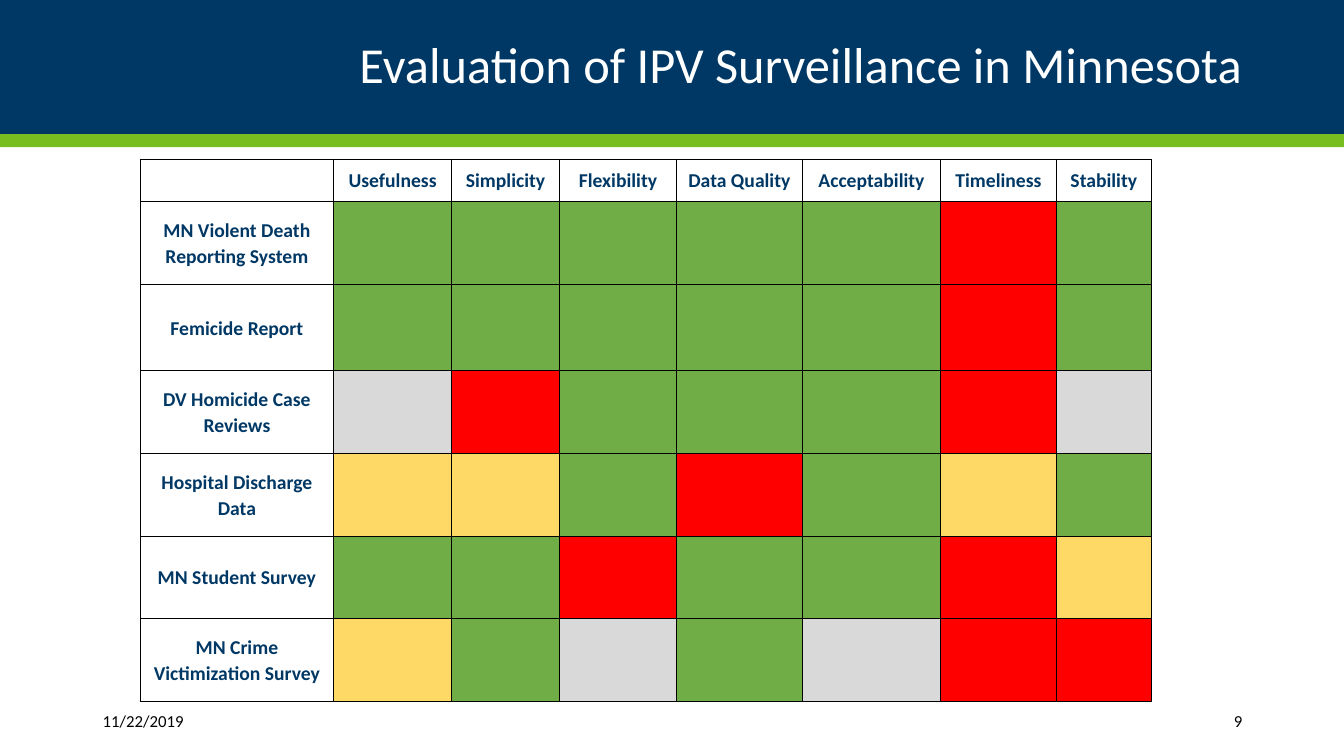
"""Build the slide that rates Minnesota IPV data sources by surveillance attribute."""
from dataclasses import dataclass

from lxml import etree
from pptx import Presentation
from pptx.dml.color import RGBColor
from pptx.enum.shapes import MSO_SHAPE
from pptx.enum.text import MSO_ANCHOR, PP_ALIGN
from pptx.oxml.ns import qn
from pptx.util import Inches, Pt

RECTANGLE = MSO_SHAPE.RECTANGLE
MIDDLE = MSO_ANCHOR.MIDDLE
LEFT, CENTER, RIGHT = PP_ALIGN.LEFT, PP_ALIGN.CENTER, PP_ALIGN.RIGHT


@dataclass(frozen=True)
class Theme:
    font: str = "Calibri"
    navy: str = "003865"
    lime: str = "78BE21"
    white: str = "FFFFFF"
    black: str = "000000"
    green: str = "70AD47"
    yellow: str = "FFD966"
    red: str = "FF0000"
    gray: str = "D9D9D9"
    title_size: int = 36
    label_size: int = 14
    footer_size: int = 12
    border_width: int = 1


THEME = Theme()
RATING_COLORS = {"G": THEME.green, "Y": THEME.yellow, "R": THEME.red, "N": THEME.gray}

ATTRIBUTES = ["Usefulness", "Simplicity", "Flexibility", "Data Quality",
              "Acceptability", "Timeliness", "Stability"]
SOURCE_RATINGS = [
    ("MN Violent Death Reporting System", "GGGGGRG"),
    ("Femicide Report", "GGGGGRG"),
    ("DV Homicide Case Reviews", "NRGGGRN"),
    ("Hospital Discharge Data", "YYGRGYG"),
    ("MN Student Survey", "GGRGGRY"),
    ("MN Crime Victimization Survey", "YGNGNRR"),
]
COLUMN_WIDTHS = [1.92, 1.17, 1.07, 1.16, 1.25, 1.37, 1.15, 0.94]
ROW_HEIGHTS = [0.42, 0.82, 0.86, 0.82, 0.82, 0.82, 0.82]


def add_band(slide, top, height, color):
    """Add a borderless band across the full slide width."""
    band = slide.shapes.add_shape(RECTANGLE, 0, Inches(top), Inches(13.33), Inches(height))
    band.shadow.inherit = False
    band.fill.solid()
    band.fill.fore_color.rgb = RGBColor.from_string(color)
    band.line.fill.background()


def write_text(frame, text, size, color, align, spacing=1.0, bold=False):
    """Write one styled run into the first paragraph of a text frame."""
    paragraph = frame.paragraphs[0]
    paragraph.alignment = align
    paragraph.line_spacing = spacing
    run = paragraph.add_run()
    run.text = text
    run.font.name = THEME.font
    run.font.size = Pt(size)
    run.font.bold = bold
    run.font.color.rgb = RGBColor.from_string(color)


def add_text(slide, box, text, size, color, align, spacing=1.0):
    """Add a vertically centred, wrapping text box."""
    frame = slide.shapes.add_textbox(*map(Inches, box)).text_frame
    frame.word_wrap = True
    frame.vertical_anchor = MIDDLE
    write_text(frame, text, size, color, align, spacing)


def add_borders(cell):
    """Draw a thin solid line on all four sides of a cell."""
    properties = cell._tc.get_or_add_tcPr()
    for side in ("a:lnL", "a:lnR", "a:lnT", "a:lnB"):
        line = etree.SubElement(properties, qn(side), w=str(Pt(THEME.border_width)))
        fill = etree.SubElement(line, qn("a:solidFill"))
        etree.SubElement(fill, qn("a:srgbClr"), val=THEME.black)


def format_cell(cell, text="", color=None):
    """Give a cell its borders, its fill and an optional label."""
    add_borders(cell)
    cell.vertical_anchor = MIDDLE
    cell.margin_left = cell.margin_right = Inches(0.06)
    cell.margin_top = cell.margin_bottom = 0
    if color:
        cell.fill.solid()
        cell.fill.fore_color.rgb = RGBColor.from_string(color)
    else:
        cell.fill.background()
    if text:
        write_text(cell.text_frame, text, THEME.label_size, THEME.navy, CENTER, 1.07, True)


def add_ratings_table(slide):
    """Add the grid of colour ratings, one row for each data source."""
    table = slide.shapes.add_table(
        len(ROW_HEIGHTS), len(COLUMN_WIDTHS), Inches(1.39), Inches(1.58),
        Inches(sum(COLUMN_WIDTHS)), Inches(sum(ROW_HEIGHTS))).table
    table.first_row = table.horz_banding = False
    for column, width in zip(table.columns, COLUMN_WIDTHS):
        column.width = Inches(width)
    for row, height in zip(table.rows, ROW_HEIGHTS):
        row.height = Inches(height)
    for column, attribute in enumerate(["", *ATTRIBUTES]):
        format_cell(table.cell(0, column), attribute)
    for row, (source, ratings) in enumerate(SOURCE_RATINGS, 1):
        format_cell(table.cell(row, 0), source)
        for column, rating in enumerate(ratings, 1):
            format_cell(table.cell(row, column), color=RATING_COLORS[rating])


def main():
    """Build and save the presentation."""
    deck = Presentation()
    deck.slide_width, deck.slide_height = Inches(13.33), Inches(7.5)
    slide = deck.slides.add_slide(deck.slide_layouts[6])
    add_band(slide, 0, 1.33, THEME.navy)
    add_band(slide, 1.33, 0.13, THEME.lime)
    add_text(slide, (0.92, 0.17, 11.5, 1), "Evaluation of IPV Surveillance in Minnesota",
             THEME.title_size, THEME.white, RIGHT, 0.9)
    add_text(slide, (0.92, 6.95, 1.49, 0.4), "11/22/2019",
             THEME.footer_size, THEME.black, LEFT)
    add_text(slide, (10.82, 6.95, 1.6, 0.4), "9", THEME.footer_size, THEME.black, RIGHT)
    add_ratings_table(slide)
    deck.save("out.pptx")


if __name__ == "__main__":
    main()
